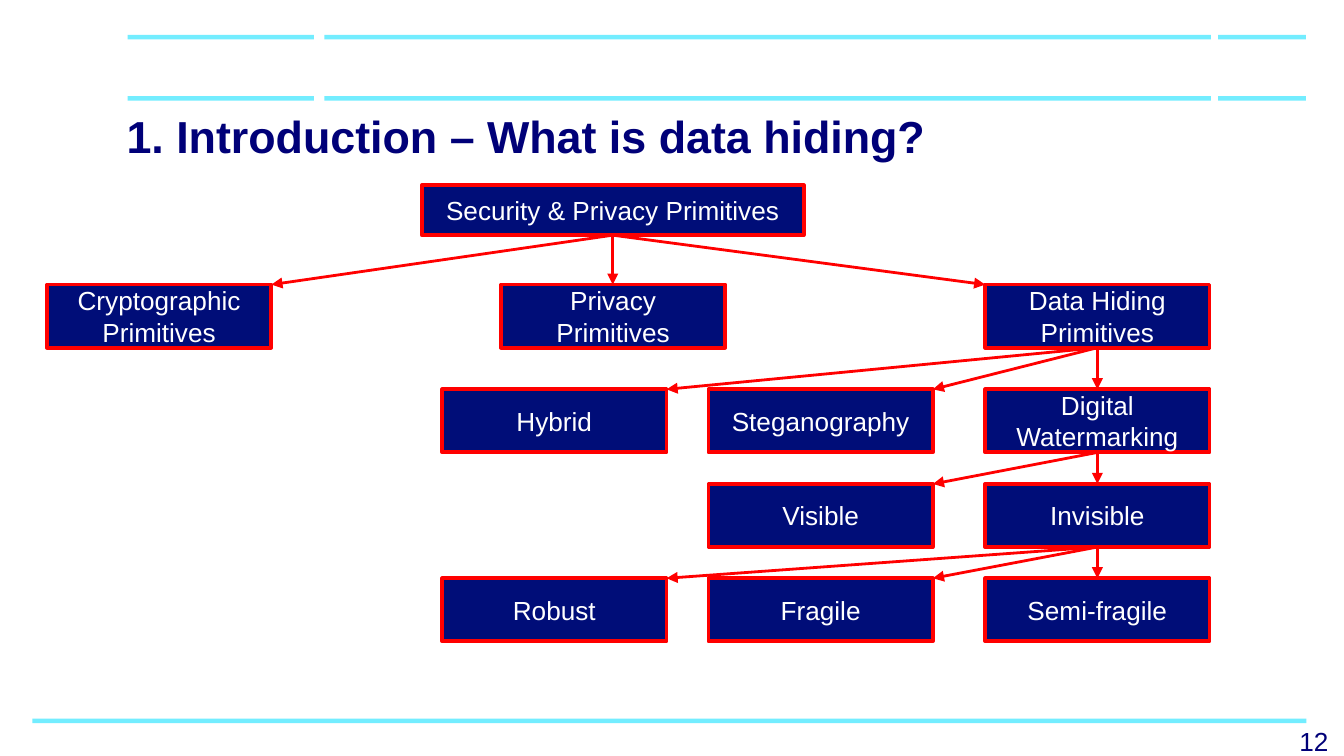
from lxml.etree import SubElement
from pptx import Presentation
from pptx.dml.color import RGBColor
from pptx.enum.shapes import MSO_CONNECTOR as Connector, MSO_SHAPE as Shape
from pptx.enum.text import MSO_ANCHOR as Anchor, PP_ALIGN as Align
from pptx.oxml.ns import qn
from pptx.util import Pt

NAVY = RGBColor(0x00, 0x0D, 0x78)
INK = RGBColor(0x00, 0x00, 0x78)
RED = RGBColor(0xFF, 0x00, 0x00)
CYAN = RGBColor(0x73, 0xED, 0xFF)
WHITE = RGBColor(0xFF, 0xFF, 0xFF)


class SlideBuilder:
    font = "Arial"
    text_size = 14

    def __init__(self, slide):
        self.slide = slide

    def text_run(self, paragraph, text, color, size=text_size, bold=False):
        run = paragraph.add_run()
        run.text = text
        run.font.name = self.font
        run.font.size = Pt(size)
        run.font.bold = bold
        run.font.color.rgb = color

    def bar(self, left, top, width, height, color=CYAN):
        shape = self.slide.shapes.add_shape(
            Shape.RECTANGLE, Pt(left), Pt(top), Pt(width), Pt(height))
        shape.shadow.inherit = False
        shape.fill.solid()
        shape.fill.fore_color.rgb = color
        shape.line.fill.background()
        return shape

    def label(self, left, top, width, height, text, size=text_size,
              bold=False, inset=3.6):
        box = self.slide.shapes.add_textbox(
            Pt(left), Pt(top), Pt(width), Pt(height))
        frame = box.text_frame
        frame.word_wrap = True
        frame.margin_top = frame.margin_bottom = Pt(inset)
        self.text_run(frame.paragraphs[0], text, INK, size, bold)

    def node(self, left, top, lines, width=120.2, height=33.8):
        shape = self.bar(left, top, width, height, NAVY)
        shape.line.color.rgb = RED
        shape.line.width = Pt(2)
        frame = shape.text_frame
        frame.word_wrap = True
        frame.vertical_anchor = Anchor.MIDDLE
        for index, text in enumerate(lines):
            paragraph = frame.add_paragraph() if index else frame.paragraphs[0]
            paragraph.alignment = Align.CENTER
            self.text_run(paragraph, text, WHITE)
        return shape

    def arrow(self, parent, child):
        """Run from the parent's bottom centre to the nearest top point of the child."""
        start = parent.left + parent.width // 2
        center = child.left + child.width // 2
        if abs(start - center) < Pt(2):
            end = start
        else:
            end = child.left + (child.width if center < start else 0)
        connector = self.slide.shapes.add_connector(
            Connector.STRAIGHT, start, parent.top + parent.height, end, child.top)
        connector.line.color.rgb = RED
        connector.line.width = Pt(1.5)
        properties = connector._element.spPr
        SubElement(properties.find(qn("a:ln")), qn("a:tailEnd"), type="triangle")
        SubElement(properties, qn("a:effectLst"))


def main():
    presentation = Presentation()
    presentation.slide_width = Pt(720)
    presentation.slide_height = Pt(405)
    builder = SlideBuilder(presentation.slides.add_slide(presentation.slide_layouts[6]))

    # Frame bars, with a white gap across the upper pair
    builder.bar(17.3, 385, 682.6, 2.4)
    for top in (51.5, 18.7):
        builder.bar(68.4, top, 580.3, 2.4)
        builder.bar(652.6, top, 47, 2.4)
    builder.bar(168.3, 9.4, 5.5, 63.4, WHITE)

    # Title and slide number
    builder.label(60.7, 51.1, 638, 61.2, "1. Introduction – What is data hiding?",
                  size=24, bold=True, inset=7.2)
    builder.label(689, 385.2, 31, 24.2, "12")

    # Tree nodes: shared columns and rows
    left, middle, right = 236.9, 379.6, 527.8
    groups, methods, visibility, strength = 152.5, 208.6, 259.3, 309.8
    root = builder.node(226, 99.2, ["Security & Privacy Primitives"], 204.6, 26.8)
    cryptographic = builder.node(25.2, groups, ["Cryptographic", "Primitives"])
    privacy = builder.node(268.4, groups, ["Privacy", "Primitives"])
    hiding = builder.node(right, groups, ["Data Hiding", "Primitives"])
    hybrid = builder.node(left, methods, ["Hybrid"])
    steganography = builder.node(middle, methods, ["Steganography"])
    watermarking = builder.node(right, methods, ["Digital Watermarking"])
    visible = builder.node(middle, visibility, ["Visible"])
    invisible = builder.node(right, visibility, ["Invisible"])
    robust = builder.node(left, strength, ["Robust"])
    fragile = builder.node(middle, strength, ["Fragile"])
    semi_fragile = builder.node(right, strength, ["Semi-fragile"])

    # Arrows from each parent to its children
    branches = [
        (root, [cryptographic, privacy, hiding]),
        (hiding, [hybrid, steganography, watermarking]),
        (watermarking, [visible, invisible]),
        (invisible, [robust, fragile, semi_fragile]),
    ]
    for parent, children in branches:
        for child in children:
            builder.arrow(parent, child)

    presentation.save("out.pptx")


if __name__ == "__main__":
    main()
